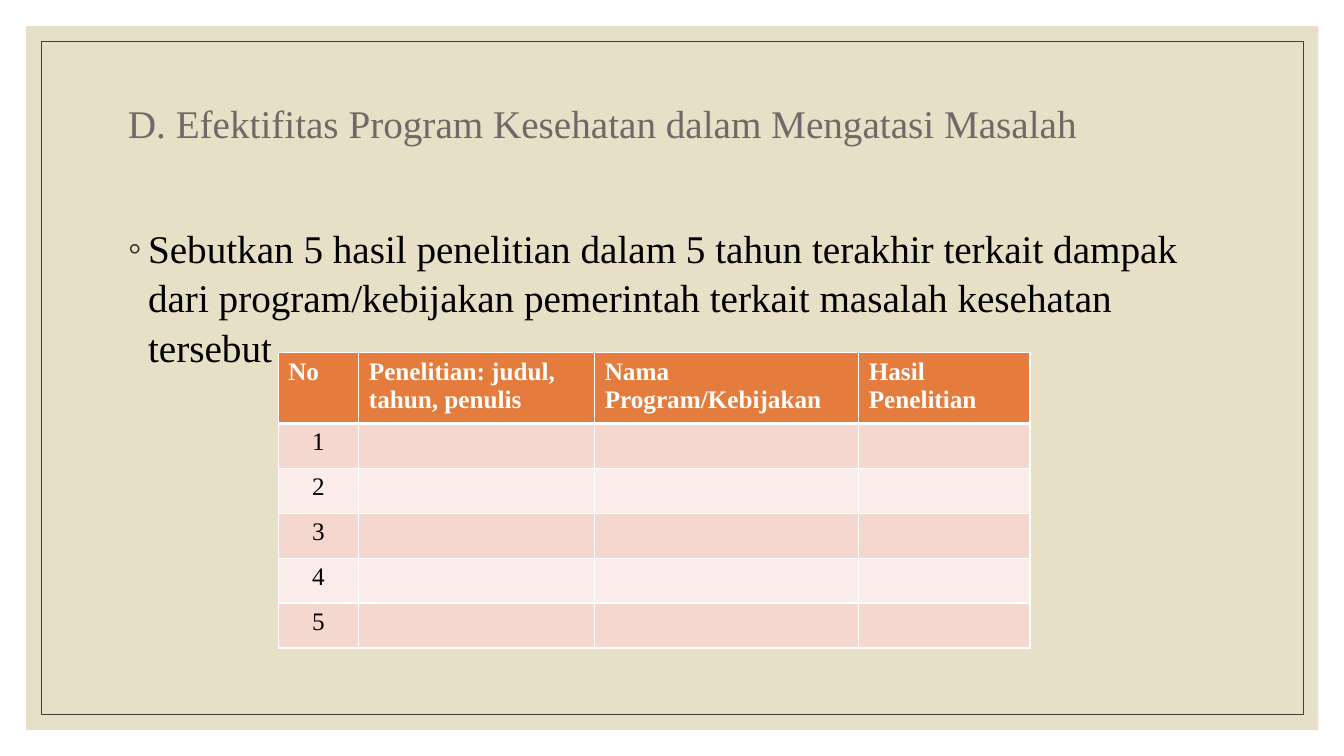
import pptx
import pptx.dml.color
import pptx.enum.shapes
import pptx.enum.text
import pptx.oxml
import pptx.oxml.ns
import pptx.util

Pt = pptx.util.Pt
ALIGN = pptx.enum.text.PP_ALIGN
ANCHOR = pptx.enum.text.MSO_ANCHOR


def colour(code):
    return pptx.dml.color.RGBColor.from_string(code)


def add_xml(parent, markup):
    namespace = pptx.oxml.ns.nsdecls("a")
    parent.append(pptx.oxml.parse_xml(markup.replace(">", f" {namespace}>", 1)))


def apply(target, values):
    for name, value in values.items():
        setattr(target, name, value)


class SlideBuilder:
    font = "Times New Roman"
    header_fill = "E37C3D"
    band_fills = ("F4D7CE", "FAECE8")
    border = "FFFFFF"

    def __init__(self, page):
        self.page = page

    def add_span(self, para, text, size, code, bold=False):
        span = para.add_run()
        span.text = text
        apply(span.font, {"name": self.font, "size": Pt(size), "bold": bold})
        span.font.color.rgb = colour(code)

    def panel(self, left, top, width, height, fill=None, line=None):
        box = self.page.shapes.add_shape(
            pptx.enum.shapes.MSO_SHAPE.RECTANGLE,
            Pt(left), Pt(top), Pt(width), Pt(height))
        box.shadow.inherit = False
        if fill:
            box.fill.solid()
            box.fill.fore_color.rgb = colour(fill)
        else:
            box.fill.background()
        if line:
            box.line.color.rgb = colour(line)
            box.line.width = Pt(0.5)
        else:
            box.line.fill.background()

    def placeholder(self, index, area, frame_format, para_format, text, code, bullet=None):
        box = self.page.placeholders[index]
        self.page.shapes._spTree.append(box._element)
        left, top, width, height = map(Pt, area)
        apply(box, {"left": left, "top": top, "width": width, "height": height})
        frame = box.text_frame
        apply(frame, {"word_wrap": True,
                      "auto_size": pptx.enum.text.MSO_AUTO_SIZE.NONE, **frame_format})
        para = frame.paragraphs[0]
        apply(para, {"alignment": ALIGN.LEFT, "space_before": Pt(0), **para_format})
        if bullet:
            properties = para._p.get_or_add_pPr()
            properties.set("marL", str(Pt(14.4)))
            properties.set("indent", str(Pt(-14.4)))
            add_xml(properties, f'<a:buClr><a:srgbClr val="{bullet[1]}"/></a:buClr>')
            add_xml(properties, f'<a:buChar char="{bullet[0]}"></a:buChar>')
        self.add_span(para, text, 28, code)

    def cell(self, cell, text, fill, bold, code, alignment, edges):
        properties = cell._tc.get_or_add_tcPr()
        for side, width in edges.items():
            add_xml(properties, f'<a:ln{side} w="{Pt(width)}"><a:solidFill>'
                                f'<a:srgbClr val="{self.border}"/></a:solidFill></a:ln{side}>')
        cell.fill.solid()
        cell.fill.fore_color.rgb = colour(fill)
        para = cell.text_frame.paragraphs[0]
        para.alignment = alignment
        if text:
            self.add_span(para, text, 18, code, bold)

    def table(self, left, top, widths, heights, rows):
        grid = self.page.shapes.add_table(
            len(heights), len(widths), Pt(left), Pt(top),
            Pt(sum(widths)), Pt(sum(heights))).table
        for column, width in zip(grid.columns, widths):
            column.width = Pt(width)
        for number, (row, height, texts) in enumerate(zip(grid.rows, heights, rows)):
            row.height = Pt(height)
            header = number == 0
            fill = self.header_fill if header else self.band_fills[(number - 1) % 2]
            edges = {"L": 1, "R": 1, "T": 3 if number == 1 else 1, "B": 3 if header else 1}
            for cell, text in zip(row.cells, texts):
                self.cell(cell, text, fill, header,
                          "FFFFFF" if header else "000000",
                          ALIGN.LEFT if header else ALIGN.CENTER, edges)


def main():
    deck = pptx.Presentation()
    apply(deck, {"slide_width": Pt(960), "slide_height": Pt(540)})
    builder = SlideBuilder(deck.slides.add_slide(deck.slide_layouts[1]))

    builder.panel(18.7, 18.7, 923, 502.6, fill="E7E0C7")
    builder.panel(29.5, 29.5, 901.4, 481, line="404040")
    builder.placeholder(
        0, (84.2, 50.4, 810, 108),
        {"vertical_anchor": ANCHOR.MIDDLE, "margin_bottom": Pt(32.6)},
        {"line_spacing": 0.9},
        "D. Efektifitas Program Kesehatan dalam Mengatasi Masalah", "726868")
    builder.placeholder(
        1, (84.2, 154.8, 792, 140.4),
        {"vertical_anchor": ANCHOR.TOP}, {"line_spacing": 1.05},
        "Sebutkan 5 hasil penelitian dalam 5 tahun terakhir terkait dampak dari "
        "program/kebijakan pemerintah terkait masalah kesehatan tersebut",
        "000000", bullet=("◦", "262626"))

    headings = ["No", "Penelitian: judul, tahun, penulis",
                "Nama Program/Kebijakan", "Hasil Penelitian"]
    numbered = [[str(number), "", "", ""] for number in range(1, 6)]
    builder.table(198.7, 252, [57.6, 168.5, 188.6, 122.4],
                  [50.4] + [32.1] * 5, [headings] + numbered)
    deck.save("out.pptx")


if __name__ == "__main__":
    main()
